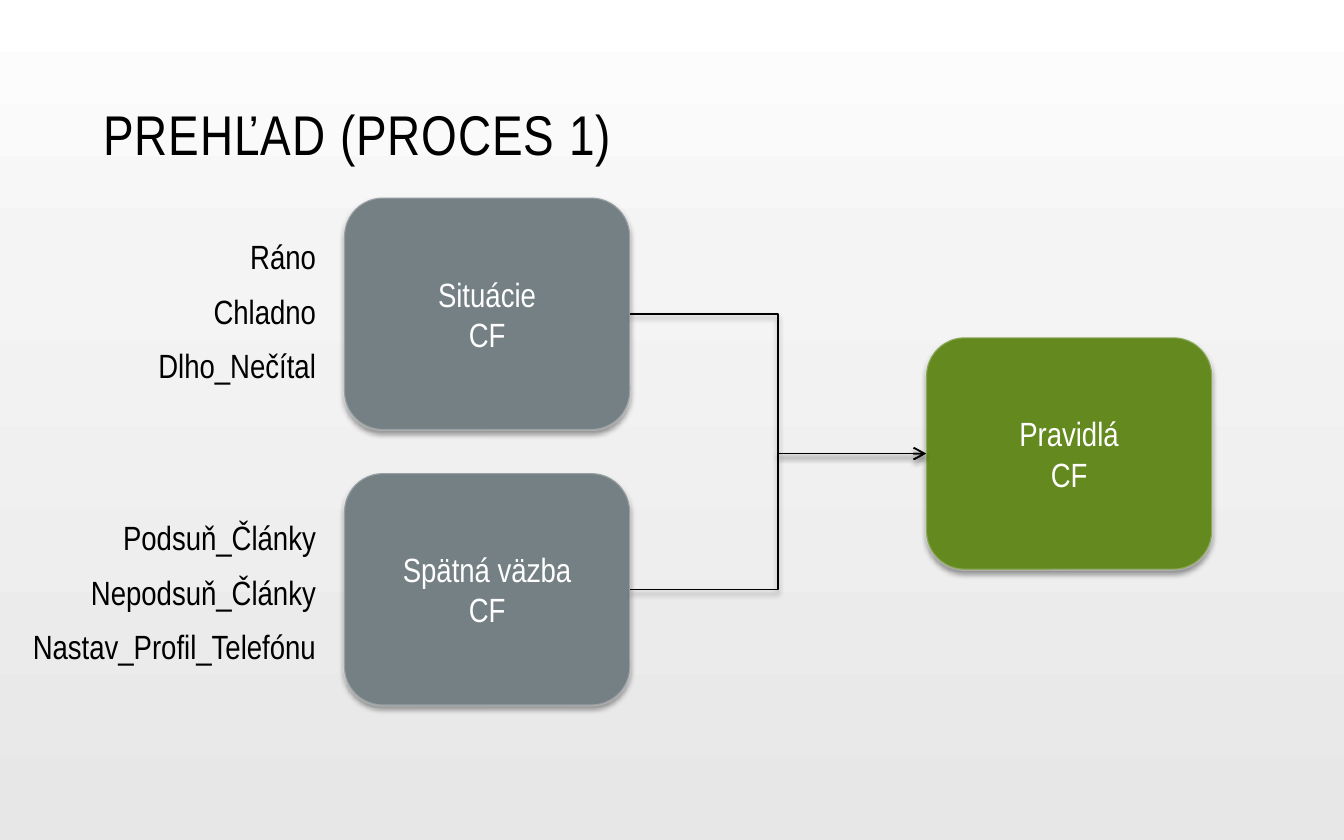
from copy import deepcopy

from lxml import etree
from pptx import Presentation
from pptx.dml.color import RGBColor
from pptx.enum.shapes import MSO_CONNECTOR, MSO_SHAPE
from pptx.enum.text import MSO_ANCHOR, MSO_AUTO_SIZE, PP_ALIGN
from pptx.oxml import parse_xml
from pptx.oxml.ns import qn
from pptx.util import Inches, Pt

ELBOW = MSO_CONNECTOR.ELBOW
ROUNDED = MSO_SHAPE.ROUNDED_RECTANGLE
LEFT, CENTER, RIGHT = PP_ALIGN.LEFT, PP_ALIGN.CENTER, PP_ALIGN.RIGHT
MIDDLE, BOTTOM = MSO_ANCHOR.MIDDLE, MSO_ANCHOR.BOTTOM
NO_AUTOFIT = MSO_AUTO_SIZE.NONE
LEFT_SIDE, RIGHT_SIDE = 1, 3

COLORS = {"text": "000000", "light": "FFFFFF", "input": "758085", "rules": "63891F"}
BACKGROUND = [(0, "FFFFFF"), (0.31, "F4F4F4"), (1, "E7E7E7")]
SHADOW = (
    '<a:effectLst xmlns:a="http://schemas.openxmlformats.org/drawingml/2006/main">'
    '<a:outerShdw blurRad="38100" dist="25400" dir="5400000" rotWithShape="0">'
    '<a:srgbClr val="000000"><a:alpha val="40000"/></a:srgbClr>'
    "</a:outerShdw></a:effectLst>"
)
BOX_W, BOX_H = 2.13, 1.73
LABEL_RIGHT, LABEL_H, LABEL_PITCH = 2.45, 0.4, 0.405


class Diagram:
    font = "Arial Narrow"
    title_size, text_size = Pt(30), Pt(18)

    def __init__(self, slide):
        self.s = slide

    def color(self, name):
        return RGBColor.from_string(COLORS[name])

    def set_text(self, tf, lines, size, color, align):
        tf.text = "\n".join(lines)
        for p in tf.paragraphs:
            p.alignment = align
            p.font.name = self.font
            p.font.size = size
            p.font.color.rgb = self.color(color)

    def cast_shadow(self, sp):
        props = sp._element.spPr
        for old in props.findall(qn("a:effectLst")):
            props.remove(old)
        props.append(parse_xml(SHADOW))

    def background(self, stops):
        fill = self.s.background.fill
        fill.gradient()
        fill.gradient_angle = 270
        gs_list = self.s._element.find(".//" + qn("a:gsLst"))
        gs_list.append(deepcopy(gs_list[-1]))
        for stop, (position, rgb) in zip(fill.gradient_stops, stops):
            stop.position = position
            stop.color.rgb = RGBColor.from_string(rgb)

    def title(self, text):
        sp = self.s.shapes.title
        sp.left, sp.top = Inches(0.67), Inches(0.25)
        sp.width, sp.height = Inches(8.67), Inches(1.04)
        tf = sp.text_frame
        tf.auto_size = NO_AUTOFIT
        tf.vertical_anchor = BOTTOM
        self.set_text(tf, [text], self.title_size, "text", LEFT)
        tf.paragraphs[0].runs[0].font._element.set("spc", "50")

    def box(self, x, y, lines, fill):
        sp = self.s.shapes.add_shape(
            ROUNDED, Inches(x), Inches(y), Inches(BOX_W), Inches(BOX_H))
        sp.fill.solid()
        sp.fill.fore_color.rgb = self.color(fill)
        sp.line.width = Pt(1.2)
        sp.line.color.rgb = self.color("light")
        line_color = sp._element.spPr.find(qn("a:ln")).find(".//" + qn("a:srgbClr"))
        etree.SubElement(line_color, qn("a:alpha"), val="25000")
        self.cast_shadow(sp)
        sp.text_frame.vertical_anchor = MIDDLE
        self.set_text(sp.text_frame, lines, self.text_size, "light", CENTER)
        return sp

    def arrow(self, source, target):
        c = self.s.shapes.add_connector(
            ELBOW, source.left + source.width, source.top + source.height // 2,
            target.left, target.top + target.height // 2)
        c.begin_connect(source, RIGHT_SIDE)
        c.end_connect(target, LEFT_SIDE)
        c.line.width = Pt(0.85)
        c.line.color.rgb = self.color("text")
        etree.SubElement(c._element.spPr.find(qn("a:ln")), qn("a:tailEnd"), type="arrow")
        self.cast_shadow(c)

    def labels(self, top, items):
        """Stack right-aligned labels, given as (text, width), beside a box."""
        for i, (text, width) in enumerate(items):
            sp = self.s.shapes.add_textbox(
                Inches(LABEL_RIGHT - width), Inches(top + i * LABEL_PITCH),
                Inches(width), Inches(LABEL_H))
            sp.text_frame.word_wrap = True
            self.set_text(sp.text_frame, [text], self.text_size, "text", RIGHT)


def main():
    prs = Presentation()
    prs.slide_width, prs.slide_height = Inches(10), Inches(6.25)
    d = Diagram(prs.slides.add_slide(prs.slide_layouts[5]))
    d.background(BACKGROUND)
    d.title("PREHĽAD (PROCES 1)")

    situations = d.box(2.56, 1.47, ["Situácie", "CF"], "input")
    feedback = d.box(2.56, 3.52, ["Spätná väzba", "CF"], "input")
    rules = d.box(6.89, 2.51, ["Pravidlá", "CF"], "rules")
    for source in (situations, feedback):
        d.arrow(source, rules)

    d.labels(1.71, [("Ráno", 1.15), ("Chladno", 1.15), ("Dlho_Nečítal", 1.46)])
    d.labels(3.8, [("Podsuň_Články", 1.86), ("Nepodsuň_Články", 1.94),
                   ("Nastav_Profil_Telefónu", 2.42)])
    prs.save("out.pptx")


if __name__ == "__main__":
    main()
